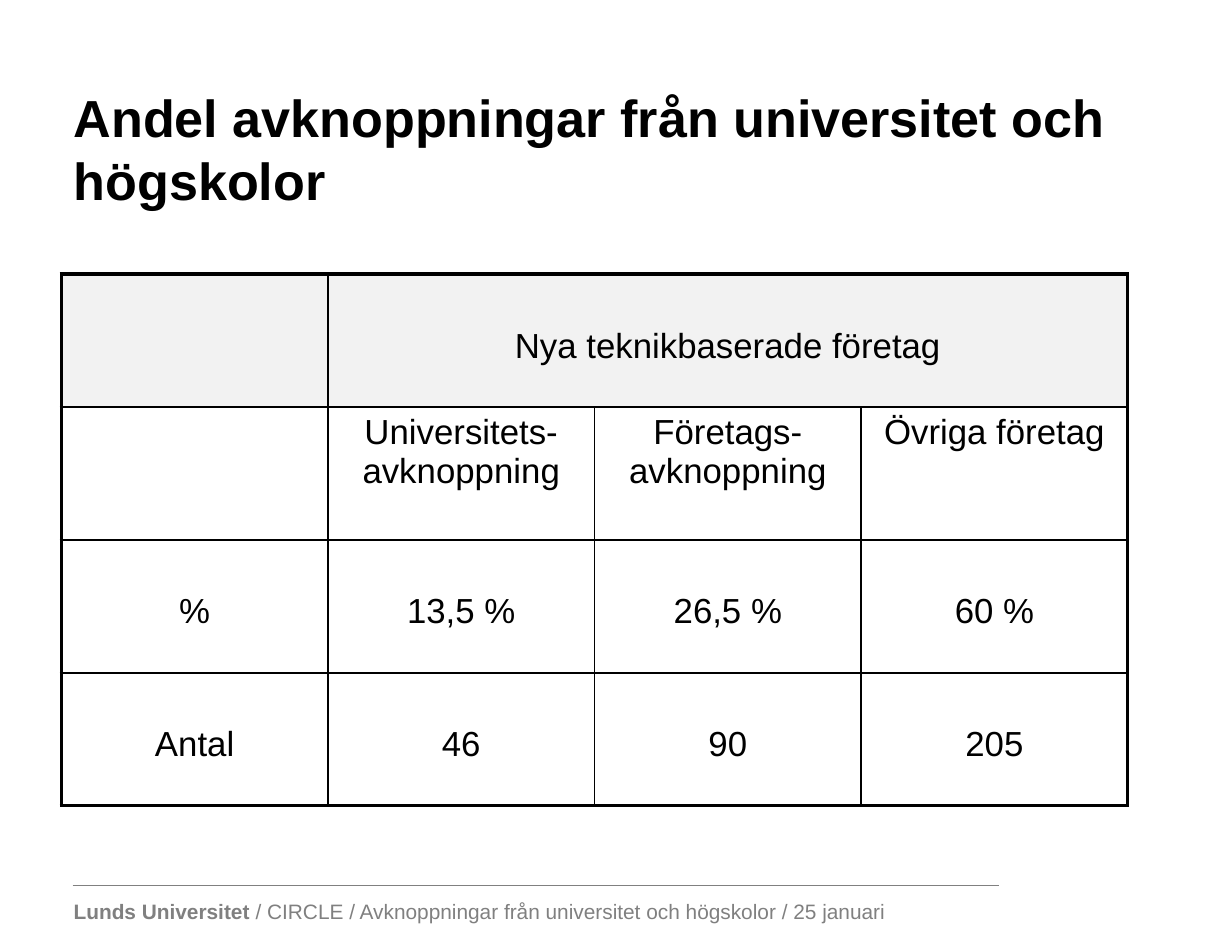
import pptx
import pptx.util
import pptx.dml.color
import pptx.enum.shapes
import pptx.enum.text
import pptx.oxml.ns
from lxml import etree

RGB = pptx.dml.color.RGBColor
BLACK = RGB(0, 0, 0)
GREY = RGB(0x80, 0x80, 0x80)
PALE = RGB(0xF2, 0xF2, 0xF2)
LEFT = 0.49
HEAD = "Nya teknikbaserade företag"
ROWS = [
    ["", HEAD, "", ""],
    ["", "Universitets-avknoppning", "Företags-avknoppning", "Övriga företag"],
    ["%", "13,5 %", "26,5 %", "60 %"],
    ["Antal", "46", "90", "205"],
]
ALIGN = pptx.enum.text.PP_ALIGN
ANCHOR = pptx.enum.text.MSO_ANCHOR
inch = pptx.util.Inches


def write(para, text, size=20, color=BLACK, bold=False, align=ALIGN.LEFT):
    """Add one run of formatted text to a paragraph."""
    para.alignment = align
    run = para.add_run()
    run.text = text
    font = run.font
    font.name, font.size, font.bold = "Arial", pptx.util.Pt(size), bold
    font.color.rgb = color


def add_box(slide, box, wrap=True):
    frame = slide.shapes.add_textbox(*map(inch, box)).text_frame
    frame.word_wrap = wrap
    return frame


def add_edges(cell, widths):
    """Draw the four borders of a cell; they come before its fill."""
    props = cell._tc.get_or_add_tcPr()
    for spot, (side, width) in enumerate(widths.items()):
        line = etree.Element(pptx.oxml.ns.qn("a:ln" + side), w=str(pptx.util.Pt(width)))
        fill = etree.SubElement(line, pptx.oxml.ns.qn("a:solidFill"))
        etree.SubElement(fill, pptx.oxml.ns.qn("a:srgbClr"), val=str(BLACK))
        props.insert(spot, line)


def add_title(slide, box):
    frame = add_box(slide, box)
    frame.vertical_anchor = ANCHOR.MIDDLE
    write(frame.paragraphs[0], "Andel avknoppningar från universitet och högskolor",
          size=30, bold=True)


def add_grid(slide, box):
    rows, cols = len(ROWS), len(ROWS[0])
    table = slide.shapes.add_table(rows, cols, *map(inch, box)).table
    table.first_row = table.horz_banding = False
    for col in table.columns:
        col.width = inch(box[2] / cols)
    for row in table.rows:
        row.height = inch(box[3] / rows)
    for r, row in enumerate(ROWS):
        for c, text in enumerate(row):
            cell = table.cell(r, c)
            if r == 0:
                cell.fill.solid()
                cell.fill.fore_color.rgb = PALE
            else:
                cell.fill.background()
            # The merged heading reaches the right edge
            last = c == cols - 1 or text == HEAD
            outer = {"L": c == 0, "R": last, "T": r == 0, "B": r == rows - 1}
            add_edges(cell, {side: 2.25 if edge else 1 for side, edge in outer.items()})
            # The second row starts at the top, the others one line down
            cell.margin_top = inch(0.05 if r == 1 else 0.42)
            if text:
                write(cell.text_frame.paragraphs[0], text, align=ALIGN.CENTER)
    table.cell(0, 1).merge(table.cell(0, cols - 1))


def add_footer(slide, box):
    left, top, width, height = box
    rule = slide.shapes.add_connector(
        pptx.enum.shapes.MSO_CONNECTOR.STRAIGHT,
        *map(inch, (left + 0.09, top, left + width, top)))
    rule.line.color.rgb = GREY
    rule.line.width = pptx.util.Pt(0.5)
    etree.SubElement(rule._element.spPr, pptx.oxml.ns.qn("a:effectLst"))
    para = add_box(slide, (left, top + 0.05, 6.74, height), wrap=False).paragraphs[0]
    write(para, "Lunds Universitet", size=12, color=GREY, bold=True)
    write(para, " / CIRCLE / Avknoppningar från universitet och högskolor / 25 januari",
          size=12, color=GREY)


def main():
    deck = pptx.Presentation()
    deck.slide_width = pptx.util.Cm(25)
    deck.slide_height = pptx.util.Cm(19)
    slide = deck.slides.add_slide(deck.slide_layouts[6])
    add_footer(slide, (LEFT, 7.08, 7.49, 0.3))
    add_title(slide, (LEFT, 0.56, 8.86, 1.25))
    add_grid(slide, (LEFT, 2.19, 8.52, 4.25))
    deck.save("out.pptx")


if __name__ == "__main__":
    main()
